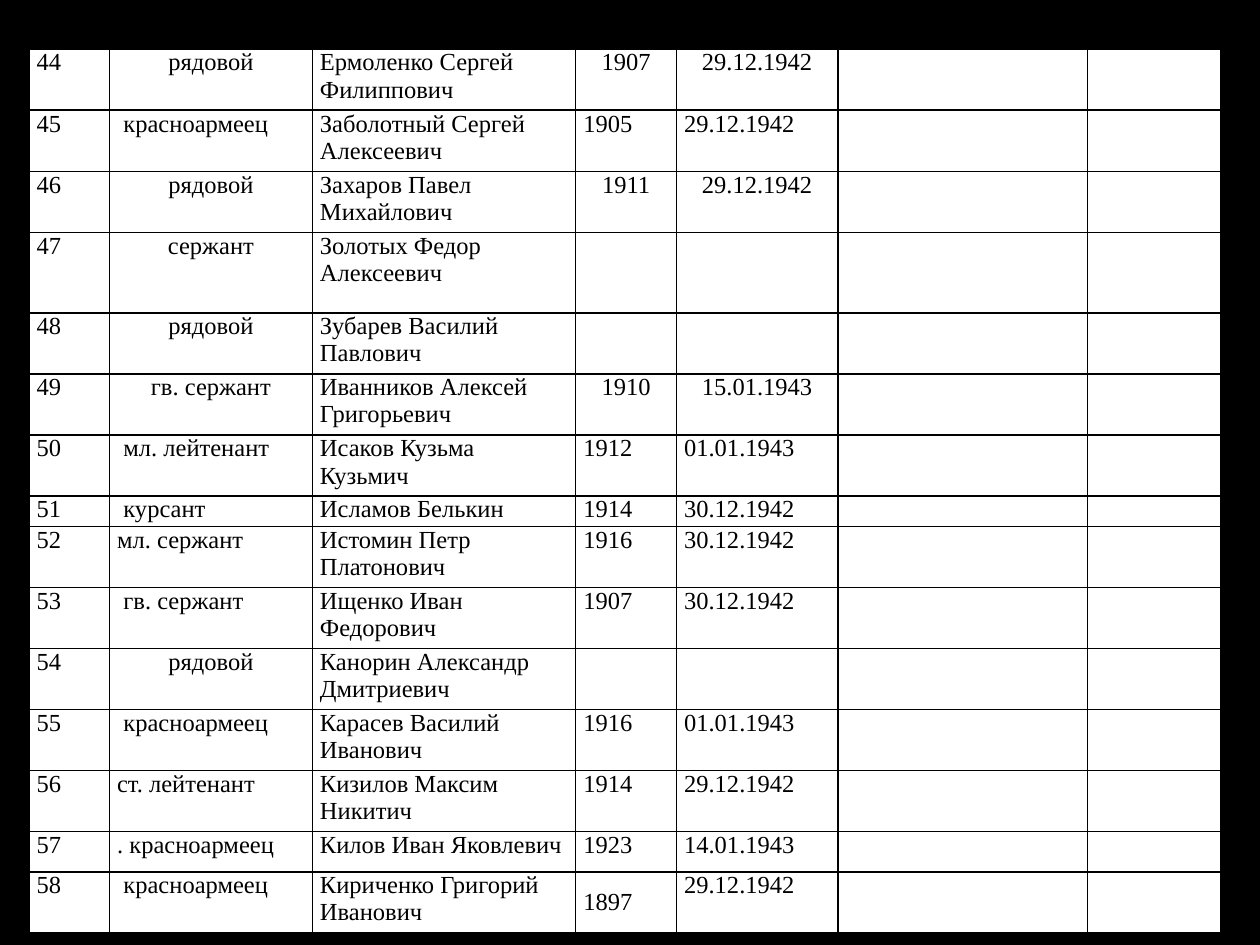
from dataclasses import dataclass
from enum import Enum

from lxml.etree import SubElement
from pptx import Presentation
from pptx.dml.color import RGBColor
from pptx.enum.text import MSO_ANCHOR, PP_ALIGN
from pptx.oxml.ns import qn
from pptx.util import Inches, Pt

FONT = "Times New Roman"
BLACK, WHITE = "000000", "FFFFFF"
FONT_SIZE, BORDER_WIDTH = Pt(14), Pt(1)
CELL_MARGIN, RANK_INDENT = 0.06, 0.05
COLUMN_WIDTHS = [0.64, 1.61, 2.09, 0.8, 1.28, 1.98, 1.06]
FIRST_NUMBER = 44


class Layout(Enum):
    LEFT = "left"
    INDENTED = "rank slightly indented"
    CENTERED = "rank, year and date centered"


@dataclass
class Soldier:
    rank: str
    name: str
    birth_year: str = ""
    death_date: str = ""
    layout: Layout = Layout.INDENTED
    height: float = 0.485
    year_anchor: MSO_ANCHOR = MSO_ANCHOR.TOP


SOLDIERS = [
    Soldier("рядовой", "Ермоленко Сергей Филиппович", "1907", "29.12.1942", Layout.CENTERED),
    Soldier("красноармеец", "Заболотный Сергей Алексеевич", "1905", "29.12.1942"),
    Soldier("рядовой", "Захаров Павел Михайлович", "1911", "29.12.1942", Layout.CENTERED),
    Soldier("сержант", "Золотых Федор Алексеевич", layout=Layout.CENTERED, height=0.64),
    Soldier("рядовой", "Зубарев Василий Павлович", layout=Layout.CENTERED),
    Soldier("гв. сержант", "Иванников Алексей Григорьевич", "1910", "15.01.1943", Layout.CENTERED),
    Soldier("мл. лейтенант", "Исаков Кузьма Кузьмич", "1912", "01.01.1943"),
    Soldier("курсант", "Исламов Белькин", "1914", "30.12.1942", height=0.24),
    Soldier("мл. сержант", "Истомин Петр Платонович", "1916", "30.12.1942", Layout.LEFT),
    Soldier("гв. сержант", "Ищенко Иван Федорович", "1907", "30.12.1942"),
    Soldier("рядовой", "Канорин Александр Дмитриевич", layout=Layout.CENTERED),
    Soldier("красноармеец", "Карасев Василий Иванович", "1916", "01.01.1943"),
    Soldier("ст. лейтенант", "Кизилов Максим Никитич", "1914", "29.12.1942", Layout.LEFT),
    Soldier(". красноармеец", "Килов Иван Яковлевич", "1923", "14.01.1943", Layout.LEFT, 0.32),
    Soldier("красноармеец", "Кириченко Григорий Иванович", "1897", "29.12.1942",
            year_anchor=MSO_ANCHOR.MIDDLE),
]


def color(value: str) -> RGBColor:
    return RGBColor.from_string(value)


def add_borders(cell) -> None:
    properties = cell._tc.get_or_add_tcPr()
    for side in ("a:lnL", "a:lnR", "a:lnT", "a:lnB"):
        line = SubElement(properties, qn(side), w=str(BORDER_WIDTH))
        fill = SubElement(line, qn("a:solidFill"))
        SubElement(fill, qn("a:srgbClr"), val=BLACK)


def write_cell(cell, text: str, *, align=PP_ALIGN.LEFT, anchor=MSO_ANCHOR.TOP,
               indent: float = 0) -> None:
    add_borders(cell)
    cell.fill.solid()
    cell.fill.fore_color.rgb = color(WHITE)
    cell.margin_left = Inches(CELL_MARGIN + indent)
    cell.margin_right = Inches(CELL_MARGIN)
    cell.margin_top = cell.margin_bottom = 0
    cell.vertical_anchor = anchor
    paragraph = cell.text_frame.paragraphs[0]
    paragraph.alignment = align
    if text:
        run = paragraph.add_run()
        run.text = text
        run.font.name, run.font.size = FONT, FONT_SIZE
        run.font.color.rgb = color(BLACK)
    else:
        # The end mark sets the line height of an empty cell
        SubElement(paragraph._p, qn("a:endParaRPr"), sz=str(int(FONT_SIZE.pt * 100)))


def write_row(table, index: int, soldier: Soldier) -> None:
    table.rows[index].height = Inches(soldier.height)
    align = PP_ALIGN.CENTER if soldier.layout is Layout.CENTERED else PP_ALIGN.LEFT
    indent = RANK_INDENT if soldier.layout is Layout.INDENTED else 0
    number, rank, name, year, date, *blanks = table.rows[index].cells
    write_cell(number, str(FIRST_NUMBER + index))
    write_cell(rank, soldier.rank, align=align, indent=indent)
    write_cell(name, soldier.name)
    write_cell(year, soldier.birth_year, align=align, anchor=soldier.year_anchor)
    write_cell(date, soldier.death_date, align=align)
    for blank in blanks:
        write_cell(blank, "")


def main() -> None:
    presentation = Presentation()
    presentation.slide_width, presentation.slide_height = Inches(10), Inches(7.5)
    slide = presentation.slides.add_slide(presentation.slide_layouts[6])
    slide.background.fill.solid()
    slide.background.fill.fore_color.rgb = color(BLACK)

    # List of soldiers
    height = sum(soldier.height for soldier in SOLDIERS)
    table = slide.shapes.add_table(
        len(SOLDIERS), len(COLUMN_WIDTHS), Inches(0.23), Inches(0.39),
        Inches(sum(COLUMN_WIDTHS)), Inches(height)).table
    table.first_row = table.horz_banding = False
    for column, width in zip(table.columns, COLUMN_WIDTHS):
        column.width = Inches(width)
    for index, soldier in enumerate(SOLDIERS):
        write_row(table, index, soldier)

    presentation.save("out.pptx")


if __name__ == "__main__":
    main()
